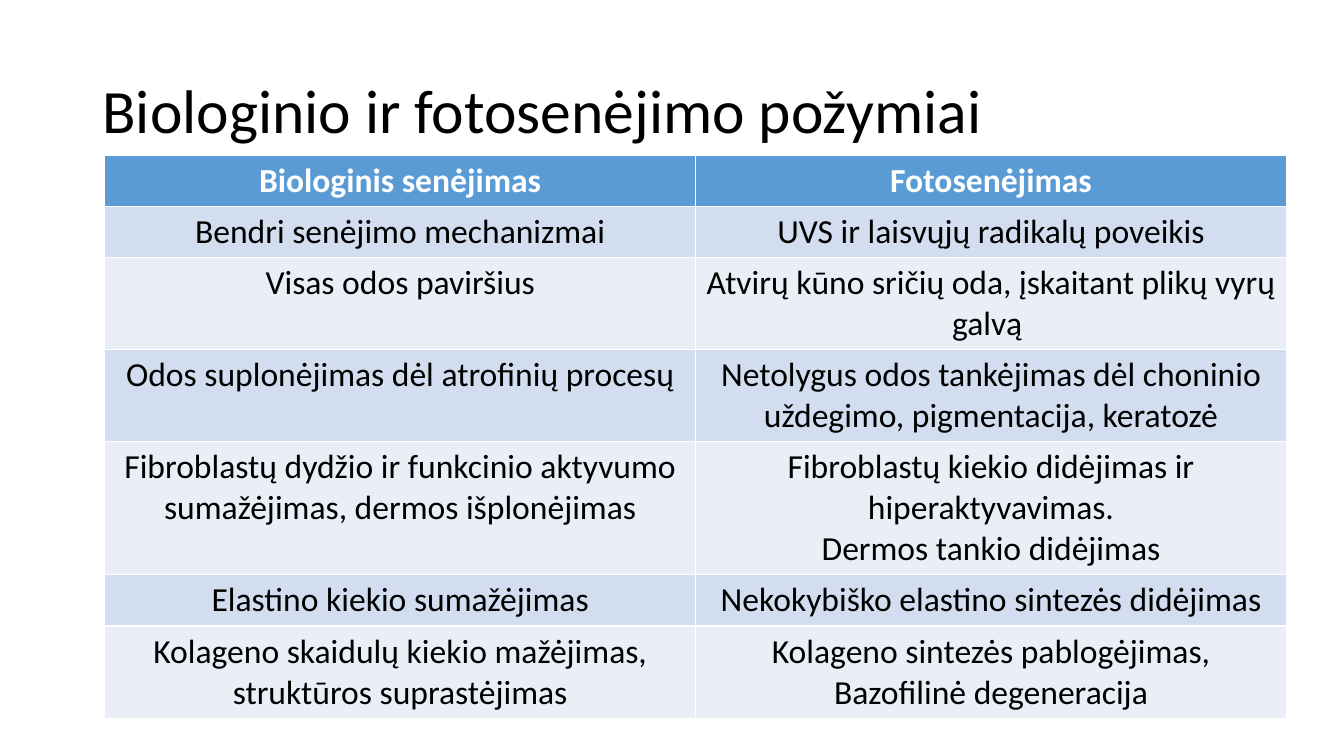
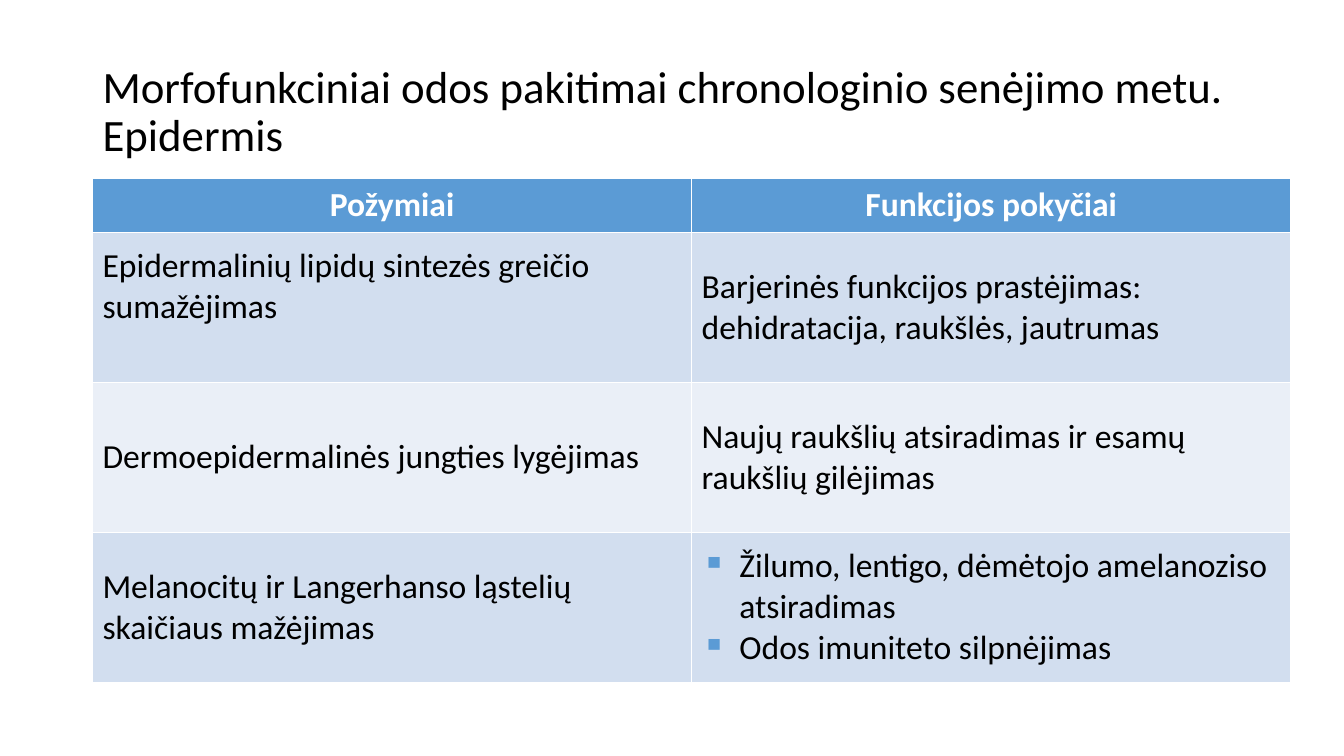
import dataclasses

import lxml.etree
import pptx
import pptx.dml.color
import pptx.enum.text
import pptx.oxml.ns
import pptx.util

Cm = pptx.util.Cm
Pt = pptx.util.Pt
RGB = pptx.dml.color.RGBColor.from_string
Align = pptx.enum.text.PP_ALIGN
Anchor = pptx.enum.text.MSO_ANCHOR
qn = pptx.oxml.ns.qn


@dataclasses.dataclass(frozen=True)
class Theme:
    font: str = "Calibri"
    ink: str = "000000"
    header_ink: str = "FFFFFF"
    accent: str = "5B9BD5"
    bands: tuple = ("D2DEEF", "EAEFF7")
    cell_size: int = 24


theme = Theme()


def style(paragraph, size, color, align, bold=False):
    paragraph.alignment = align
    paragraph.font.name = theme.font
    paragraph.font.size = Pt(size)
    paragraph.font.bold = bold
    paragraph.font.color.rgb = RGB(color)


def add_bullet(paragraph):
    properties = paragraph._p.get_or_add_pPr()
    indent = Cm(0.95)
    properties.set("marL", str(indent))
    properties.set("indent", str(-indent))
    color = lxml.etree.SubElement(properties, qn("a:buClr"))
    lxml.etree.SubElement(color, qn("a:srgbClr"), val=theme.accent)
    lxml.etree.SubElement(properties, qn("a:buChar"), char="▪")


aging_signs = dict(
    title="Biologinio ir fotosenėjimo požymiai",
    title_size=44,
    left=2.64,
    top=3.91,
    column_width=14.89,
    row_heights=[1.29, 1.29, 2.32, 2.32, 3.35, 1.29, 2.32],
    anchor=Anchor.TOP,
    body_align=Align.CENTER,
    rows=[
        ("Biologinis senėjimas", "Fotosenėjimas"),
        ("Bendri senėjimo mechanizmai", "UVS ir laisvųjų radikalų poveikis"),
        ("Visas odos paviršius", "Atvirų kūno sričių oda, įskaitant plikų vyrų galvą "),
        ("Odos suplonėjimas dėl atrofinių procesų",
         "Netolygus odos tankėjimas dėl choninio uždegimo, pigmentacija, keratozė"),
        ("Fibroblastų dydžio ir funkcinio aktyvumo sumažėjimas, dermos išplonėjimas",
         "Fibroblastų kiekio didėjimas ir hiperaktyvavimas.\nDermos tankio didėjimas"),
        ("Elastino kiekio sumažėjimas", "Nekokybiško elastino sintezės didėjimas"),
        ("Kolageno skaidulų kiekio mažėjimas, struktūros suprastėjimas",
         "Kolageno sintezės pablogėjimas,\vBazofilinė degeneracija"),
    ],
)

epidermis_changes = dict(
    title="Morfofunkciniai odos pakitimai chronologinio senėjimo metu.\vEpidermis",
    title_size=32,
    left=2.33,
    top=4.5,
    column_width=15.1,
    row_heights=[1.35, 3.78, 3.78, 3.78],
    anchor=Anchor.MIDDLE,
    body_align=Align.LEFT,
    rows=[
        ("Požymiai", "Funkcijos pokyčiai"),
        ("Epidermalinių lipidų sintezės greičio sumažėjimas",
         "Barjerinės funkcijos prastėjimas: dehidratacija, raukšlės, jautrumas"),
        ("Dermoepidermalinės jungties lygėjimas",
         "Naujų raukšlių atsiradimas ir esamų raukšlių gilėjimas"),
        ("Melanocitų ir Langerhanso ląstelių skaičiaus mažėjimas",
         "Žilumo, lentigo, dėmėtojo amelanoziso atsiradimas\nOdos imuniteto silpnėjimas"),
    ],
)

deck = pptx.Presentation()
deck.slide_width = Cm(33.87)
deck.slide_height = Cm(19.05)
title_only = deck.slide_layouts[5]
tables = []

for topic in (aging_signs, epidermis_changes):
    slide = deck.slides.add_slide(title_only)

    title = slide.shapes.title
    title.left, title.top, title.width, title.height = Cm(2.33), Cm(1.01), Cm(29.21), Cm(3.68)
    title.text_frame.text = topic["title"]
    title.text_frame.word_wrap = True
    title.text_frame.auto_size = pptx.enum.text.MSO_AUTO_SIZE.NONE
    title.text_frame.vertical_anchor = Anchor.MIDDLE
    heading = title.text_frame.paragraphs[0]
    heading.line_spacing = 0.9
    style(heading, topic["title_size"], theme.ink, Align.LEFT)

    rows, heights = topic["rows"], topic["row_heights"]
    table = slide.shapes.add_table(
        len(rows), 2, Cm(topic["left"]), Cm(topic["top"]),
        Cm(2 * topic["column_width"]), Cm(sum(heights))).table
    tables.append(table)
    for column in table.columns:
        column.width = Cm(topic["column_width"])

    for row_index, (texts, height) in enumerate(zip(rows, heights)):
        table.rows[row_index].height = Cm(height)
        is_header = row_index == 0
        fill = theme.accent if is_header else theme.bands[(row_index - 1) % 2]
        ink = theme.header_ink if is_header else theme.ink
        align = Align.CENTER if is_header else topic["body_align"]
        for column_index, text in enumerate(texts):
            cell = table.cell(row_index, column_index)
            cell.text = text
            cell.vertical_anchor = topic["anchor"]
            cell.fill.solid()
            cell.fill.fore_color.rgb = RGB(fill)
            for paragraph in cell.text_frame.paragraphs:
                style(paragraph, theme.cell_size, ink, align, is_header)

epidermis_table = tables[1]
epidermis_table.cell(1, 0).margin_bottom = Cm(1.16)
for effect in epidermis_table.cell(3, 1).text_frame.paragraphs:
    effect._p.get_or_add_pPr().clear()
    add_bullet(effect)
    style(effect, theme.cell_size, theme.ink, Align.LEFT)

deck.save("out.pptx")
